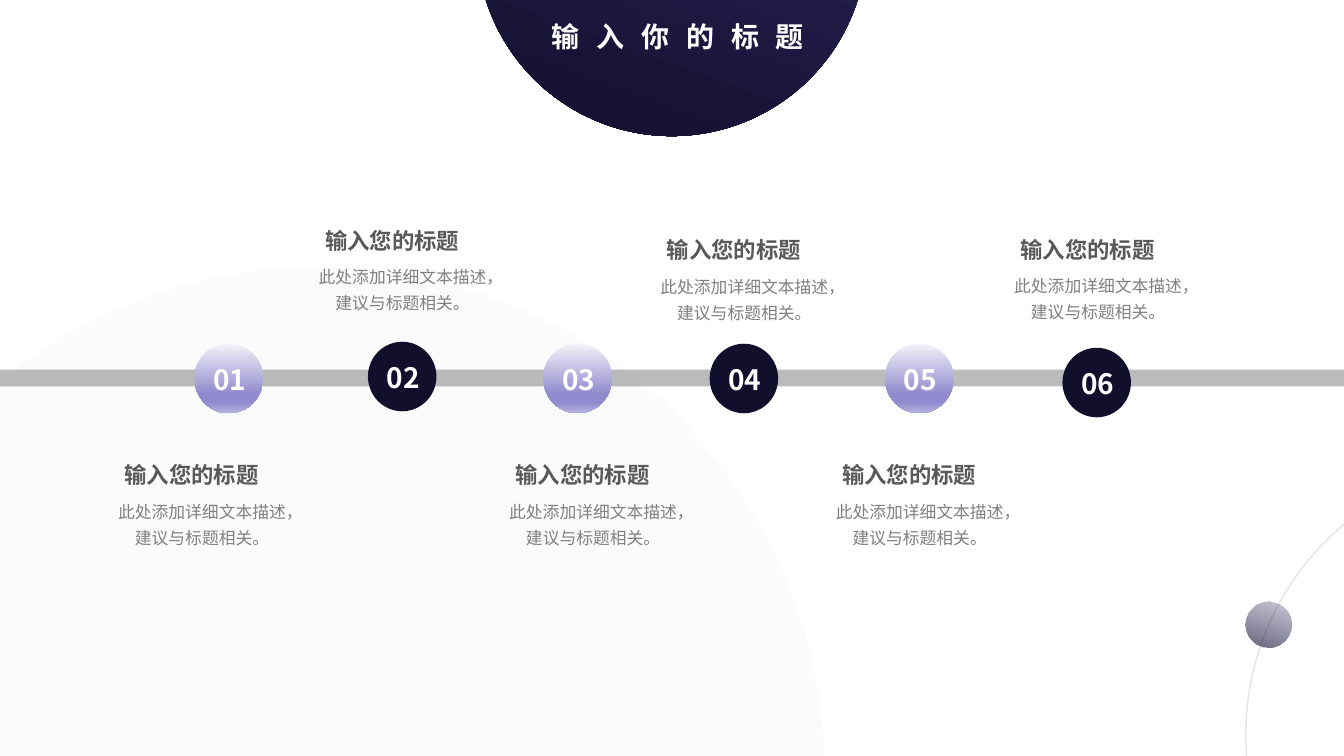
from dataclasses import dataclass

import pptx
import pptx.dml.color
import pptx.enum.shapes
import pptx.enum.text
import pptx.oxml
import pptx.oxml.ns
import pptx.util

SHAPE = pptx.enum.shapes.MSO_SHAPE
ANCHOR = pptx.enum.text.MSO_ANCHOR
COLS, ROWS = 160, 90  # square grid cells across and down the slide
CELL = pptx.util.Inches(7.5) // ROWS


@dataclass(frozen=True)
class Theme:
    font: str = "Noto Sans CJK SC"
    white: str = "FFFFFF"
    navy: str = "120F2D"
    heading: str = "595959"
    grey: str = "808080"
    ring: str = "A6A6A6"
    pale: str = "F2F2F2"
    # Gradient stops: position, colour, opacity (all but colour in percent)
    indigo: tuple = ((0, "2E2961", 100), (100, "120F2D", 100))
    mist: tuple = ((0, "2E2961", 26), (100, "120F2D", 65))
    lilac: tuple = ((0, "F3F2F9", 100), (74, "8F89CD", 100),
                    (83, "8F89CD", 100), (100, "B5B1DE", 100))
    large: int = 20
    medium: int = 16
    small: int = 12


THEME = Theme()

TITLE = "输入你的标题"
CAPTION = "输入您的标题"
DETAIL = "此处添加详细文本描述，建议与标题相关。"

# Per step: circle column and row, caption column and row
STEPS = [
    (23.16, 40.92, 12.48, 54.36),
    (43.8, 40.68, 36.36, 26.4),
    (64.68, 40.92, 59.04, 54.36),
    (84.48, 40.92, 77.04, 27.55),
    (105.36, 40.92, 97.92, 54.36),
    (126.48, 41.4, 119.16, 27.48),
]


def grid(*cells):
    return [round(c * CELL) for c in cells]


def rgb(color):
    return pptx.dml.color.RGBColor.from_string(color)


def set_alpha(fill_parent, percent):
    """Make the solid colour inside an element partly transparent."""
    color = fill_parent.find(".//" + pptx.oxml.ns.qn("a:srgbClr"))
    alpha = color.makeelement(pptx.oxml.ns.qn("a:alpha"), {"val": str(percent * 1000)})
    color.append(alpha)


def set_gradient(sp, stops, angle):
    stop_xml = "".join(
        f'<a:gs pos="{pos * 1000}"><a:srgbClr val="{color}">'
        f'<a:alpha val="{alpha * 1000}"/></a:srgbClr></a:gs>'
        for pos, color, alpha in stops)
    gradient = pptx.oxml.parse_xml(
        f'<a:gradFill {pptx.oxml.ns.nsdecls("a")} rotWithShape="1"><a:gsLst>{stop_xml}'
        f'</a:gsLst><a:lin ang="{angle * 60000}" scaled="0"/></a:gradFill>')
    geometry = sp._element.spPr.find(pptx.oxml.ns.qn("a:prstGeom"))
    geometry.addnext(gradient)


def add_circle(s, x, y, w, h, fill=None, stops=None, angle=90, alpha=None, line=None):
    sp = s.shapes.add_shape(SHAPE.OVAL, *grid(x, y, w, h))
    sp.shadow.inherit = False
    if stops:
        set_gradient(sp, stops, angle)
    elif fill:
        sp.fill.solid()
        sp.fill.fore_color.rgb = rgb(fill)
    else:
        sp.fill.background()
    if line:
        sp.line.color.rgb = rgb(line)
        sp.line.width = pptx.util.Pt(1)
    else:
        sp.line.fill.background()
    if alpha:
        set_alpha(sp._element.spPr, alpha)
    return sp


def add_text(s, text, x, y, w, h, size=THEME.small, color=THEME.grey, bold=False,
             anchor=ANCHOR.TOP, wrap=True, inset=True, line_spacing=None, tracking=None):
    tf = s.shapes.add_textbox(*grid(x, y, w, h)).text_frame
    tf.word_wrap = wrap
    tf.vertical_anchor = anchor
    if not inset:
        tf.margin_left = tf.margin_right = tf.margin_top = tf.margin_bottom = 0
    p = tf.paragraphs[0]
    p.alignment = pptx.enum.text.PP_ALIGN.CENTER
    if line_spacing:
        p.line_spacing = line_spacing
    r = p.add_run()
    r.text = text
    r.font.size = pptx.util.Pt(size)
    r.font.bold = bold
    r.font.color.rgb = rgb(color)
    r.font.name = THEME.font
    props = r.font._element
    latin = props.find(pptx.oxml.ns.qn("a:latin"))
    latin.addnext(props.makeelement(pptx.oxml.ns.qn("a:ea"), {"typeface": THEME.font}))
    if tracking:
        props.set("spc", str(tracking * 100))


def add_axis(s, row):
    x1, y, x2 = grid(0, row, COLS)
    line = s.shapes.add_connector(pptx.enum.shapes.MSO_CONNECTOR.STRAIGHT, x1, y, x2, y)
    line.line.color.rgb = rgb(THEME.grey)
    line.line.width = pptx.util.Pt(12)
    props = line._element.spPr
    set_alpha(props, 53)
    props.append(props.makeelement(pptx.oxml.ns.qn("a:effectLst"), {}))


def add_step(s, number, x, y):
    look = {"stops": THEME.lilac} if number % 2 else {"fill": THEME.navy}
    add_circle(s, x, y, 8.16, 8.28, **look)
    add_text(s, f"{number:02d}", x, y + 2, 8.4, 4.44, size=THEME.large,
             color=THEME.white, bold=True, anchor=ANCHOR.MIDDLE)


def add_caption(s, x, y):
    add_text(s, CAPTION, x, y, 20.64, 4.44, size=THEME.medium,
             color=THEME.heading, bold=True)
    add_text(s, DETAIL, x, y + 4.05, 23.16, 7.2, line_spacing=1.3)


def main():
    prs = pptx.Presentation()
    prs.slide_width, prs.slide_height = grid(COLS, ROWS)
    s = prs.slides.add_slide(prs.slide_layouts[6])

    # Title on its half-hidden disc
    add_circle(s, 56.76, -30.24, 46.44, 46.44, stops=THEME.indigo, angle=110)
    add_text(s, TITLE, 54.48, 2.28, 52.44, 6.12, size=THEME.large, color=THEME.white,
             bold=True, wrap=False, inset=False, tracking=12)

    # Background decoration
    add_circle(s, 148.32, 54.84, 65.16, 65.16, line=THEME.ring, alpha=30)
    add_circle(s, 148.32, 71.64, 5.4, 5.4, stops=THEME.mist, angle=110)
    add_circle(s, -22.2, 31.8, 120.36, 120.36, fill=THEME.pale, alpha=29)

    # Timeline with captions alternating below and above
    add_axis(s, ROWS / 2)
    for number, (x, y, caption_x, caption_y) in enumerate(STEPS, 1):
        add_step(s, number, x, y)
        add_caption(s, caption_x, caption_y)

    prs.save("out.pptx")


if __name__ == "__main__":
    main()
